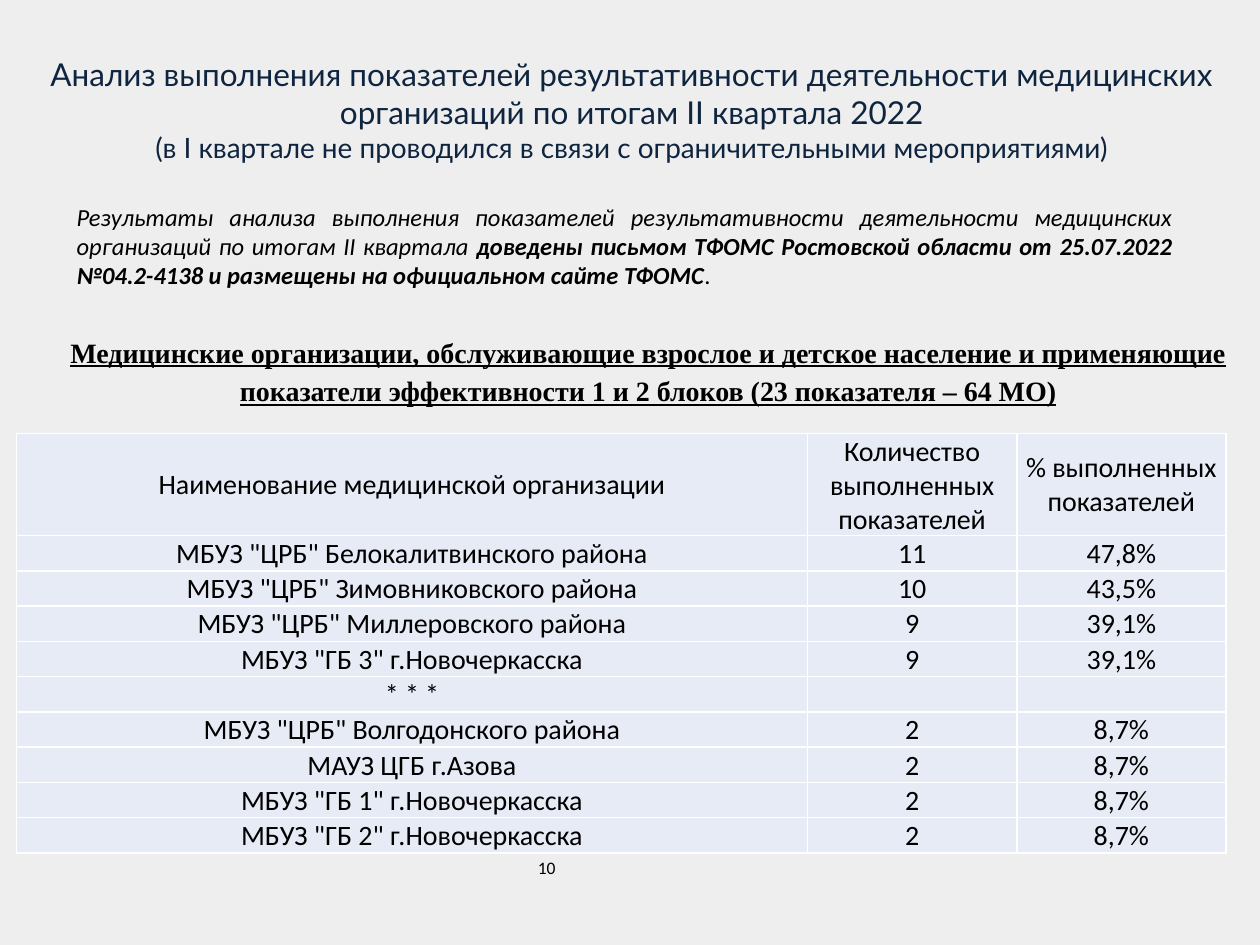
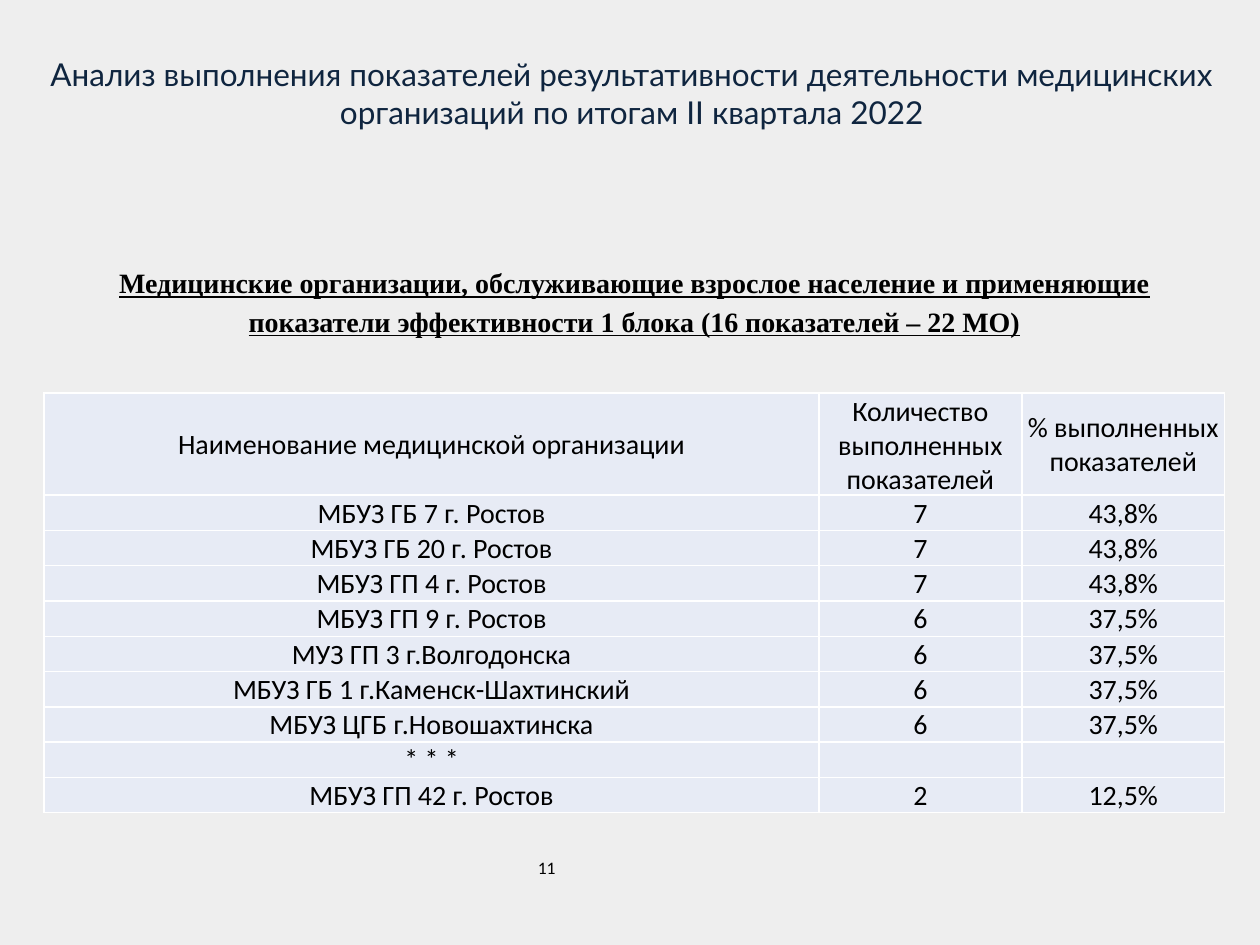
from dataclasses import dataclass

from lxml.etree import SubElement
from pptx import Presentation
from pptx.dml.color import RGBColor
from pptx.enum.text import MSO_ANCHOR, MSO_AUTO_SIZE, PP_ALIGN
from pptx.oxml.ns import qn
from pptx.util import Inches, Pt


@dataclass(frozen=True)
class Theme:
    background: str = "EEEEEE"
    title_color: str = "0F253F"
    text_color: str = "000000"
    cell_fill: str = "E7EBF5"
    cell_border: str = "FFFFFF"
    title_font: str = "Lato"
    body_font: str = "Calibri"
    heading_font: str = "Times New Roman"
    title_size: int = 18
    subtitle_size: int = 16
    heading_size: int = 16
    table_size: int = 16
    note_size: int = 14
    page_size: int = 10
    border_width: int = 1


THEME = Theme()

TITLE = ("Анализ выполнения показателей результативности деятельности "
         "медицинских организаций по итогам II квартала 2022")
SUBTITLE = "(в I квартале не проводился в связи с ограничительными мероприятиями)"
NOTE_LEAD = ("Результаты анализа выполнения показателей результативности деятельности "
             "медицинских организаций по итогам II квартала ")
NOTE_STRESSED = ("доведены письмом ТФОМС Ростовской области от 25.07.2022 "
                 "№04.2-4138 и размещены на официальном сайте ТФОМС")
MIXED_HEADING = ("Медицинские организации, обслуживающие взрослое и детское население "
                 "и применяющие показатели эффективности 1 и 2 блоков "
                 "(23 показателя – 64 МО)")
ADULT_HEADING = ("Медицинские организации, обслуживающие взрослое население "
                 "и применяющие показатели эффективности 1 блока "
                 "(16 показателей – 22 МО)")

COLUMN_TITLES = ("Наименование медицинской организации",
                 "Количество выполненных показателей",
                 "% выполненных показателей")
SKIPPED = ("* * *", "", "")
MIXED_RESULTS = [
    ('МБУЗ "ЦРБ" Белокалитвинского района', "11", "47,8%"),
    ('МБУЗ "ЦРБ" Зимовниковского района', "10", "43,5%"),
    ('МБУЗ "ЦРБ" Миллеровского района', "9", "39,1%"),
    ('МБУЗ "ГБ 3" г.Новочеркасска', "9", "39,1%"),
    SKIPPED,
    ('МБУЗ "ЦРБ" Волгодонского района', "2", "8,7%"),
    ("МАУЗ ЦГБ г.Азова", "2", "8,7%"),
    ('МБУЗ "ГБ 1" г.Новочеркасска', "2", "8,7%"),
    ('МБУЗ "ГБ 2" г.Новочеркасска', "2", "8,7%"),
]
ADULT_RESULTS = [
    ("МБУЗ ГБ 7 г. Ростов", "7", "43,8%"),
    ("МБУЗ ГБ 20 г. Ростов", "7", "43,8%"),
    ("МБУЗ ГП 4 г. Ростов", "7", "43,8%"),
    ("МБУЗ ГП 9 г. Ростов", "6", "37,5%"),
    ("МУЗ ГП 3 г.Волгодонска", "6", "37,5%"),
    ("МБУЗ ГБ 1 г.Каменск-Шахтинский", "6", "37,5%"),
    ("МБУЗ ЦГБ г.Новошахтинска", "6", "37,5%"),
    SKIPPED,
    ("МБУЗ ГП 42 г. Ростов", "2", "12,5%"),
]


def style_run(run, font, size, color=THEME.text_color, **emphasis):
    run.font.name = font
    run.font.size = Pt(size)
    run.font.color.rgb = RGBColor.from_string(color)
    for trait, value in emphasis.items():
        setattr(run.font, trait, value)


def add_frame(slide, left, top, width, height, fit=True):
    frame = slide.shapes.add_textbox(
        Inches(left), Inches(top), Inches(width), Inches(height)).text_frame
    frame.word_wrap = True
    if fit:
        frame.auto_size = MSO_AUTO_SIZE.SHAPE_TO_FIT_TEXT
    return frame


def add_title(slide, height, *lines):
    frame = add_frame(slide, 0, 0.39, 10.03, height)
    frame.text = "\n".join(lines)
    for line, size in zip(frame.paragraphs, (THEME.title_size, THEME.subtitle_size)):
        line.alignment = PP_ALIGN.CENTER
        style_run(line.runs[0], THEME.title_font, size, THEME.title_color)


def add_note(slide):
    note = add_frame(slide, 0.51, 1.55, 8.9, 0.81).paragraphs[0]
    note.alignment = PP_ALIGN.JUSTIFY
    for wording, stressed in ((NOTE_LEAD, False), (NOTE_STRESSED, True), (".", False)):
        part = note.add_run()
        part.text = wording
        style_run(part, THEME.body_font, THEME.note_size, italic=True, bold=stressed)


def add_heading(slide, wording, left, top, width):
    heading = add_frame(slide, left, top, width, 0.72).paragraphs[0]
    heading.text = wording
    heading.alignment = PP_ALIGN.CENTER
    heading.line_spacing = 1.15
    heading.space_after = Pt(10)
    style_run(heading.runs[0], THEME.heading_font, THEME.heading_size,
              bold=True, underline=True)


def add_page_number(slide, number):
    page = add_frame(slide, 4.17, 6.75, 2, 0.4, fit=False).paragraphs[0]
    page.text = str(number)
    style_run(page.runs[0], THEME.body_font, THEME.page_size)


def add_borders(cell):
    properties = cell._tc.get_or_add_tcPr()
    for side in ("a:lnL", "a:lnR", "a:lnT", "a:lnB"):
        border = SubElement(properties, qn(side), w=str(Pt(THEME.border_width)))
        paint = SubElement(border, qn("a:solidFill"))
        SubElement(paint, qn("a:srgbClr"), val=THEME.cell_border)


def fill_cell(cell, value):
    add_borders(cell)
    cell.fill.solid()
    cell.fill.fore_color.rgb = RGBColor.from_string(THEME.cell_fill)
    cell.vertical_anchor = MSO_ANCHOR.MIDDLE
    cell.margin_left = cell.margin_right = cell.margin_top = Inches(0.01)
    cell.margin_bottom = 0
    entry = cell.text_frame.paragraphs[0]
    entry.text = value
    entry.alignment = PP_ALIGN.CENTER
    for run in entry.runs:
        style_run(run, THEME.body_font, THEME.table_size)
    if not value:
        SubElement(entry._p, qn("a:endParaRPr"), sz=str(THEME.table_size * 100))


def add_results(slide, results, left, top, name_width, value_width):
    rows = [COLUMN_TITLES, *results]
    widths = (name_width, value_width, value_width)
    table = slide.shapes.add_table(
        len(rows), len(widths), Inches(left), Inches(top),
        Inches(sum(widths)), Inches(3.3)).table
    table.first_row = table.horz_banding = False
    for column, width in zip(table.columns, widths):
        column.width = Inches(width)
    for index, values in enumerate(rows):
        table.rows[index].height = Inches(0.28 if index else 0.8)
        for position, value in enumerate(values):
            fill_cell(table.cell(index, position), value)


def add_page(deck, number):
    slide = deck.slides.add_slide(deck.slide_layouts[6])
    slide.background.fill.solid()
    slide.background.fill.fore_color.rgb = RGBColor.from_string(THEME.background)
    add_page_number(slide, number)
    return slide


def main():
    deck = Presentation()
    deck.slide_width = Inches(10)
    deck.slide_height = Inches(7.5)

    mixed = add_page(deck, 10)
    add_title(mixed, 0.98, TITLE, SUBTITLE)
    add_results(mixed, MIXED_RESULTS, 0.13, 3.44, 6.28, 1.66)
    add_note(mixed)
    add_heading(mixed, MIXED_HEADING, 0.13, 2.57, 10.03)

    adult = add_page(deck, 11)
    add_title(adult, 0.71, TITLE)
    add_heading(adult, ADULT_HEADING, 0.43, 2.02, 9.21)
    add_results(adult, ADULT_RESULTS, 0.35, 3.12, 6.15, 1.61)

    deck.save("out.pptx")


if __name__ == "__main__":
    main()
